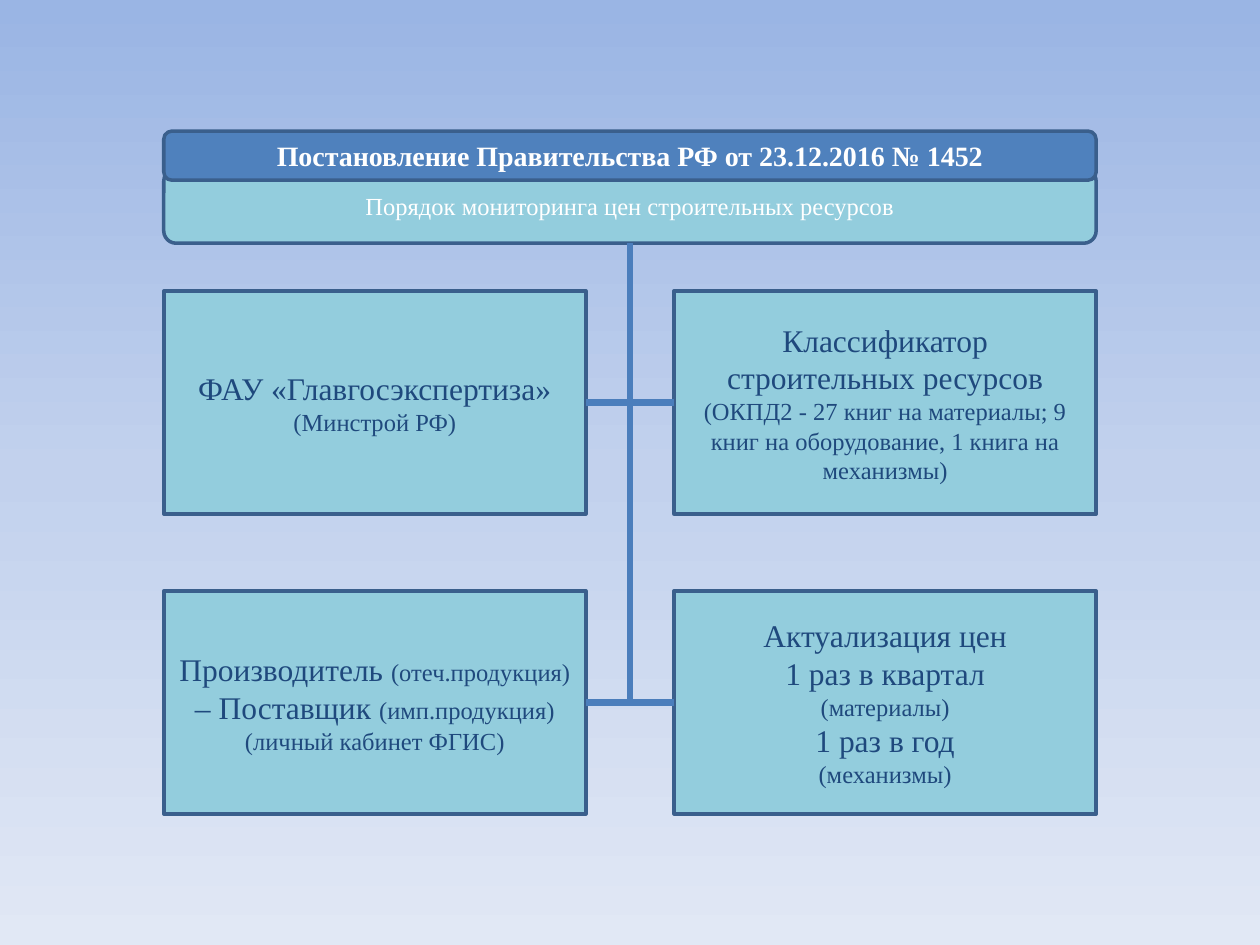
from copy import deepcopy

from lxml.etree import SubElement
from pptx import Presentation
from pptx.dml.color import RGBColor
from pptx.enum.shapes import MSO_CONNECTOR as Connector, MSO_SHAPE as Shape
from pptx.enum.text import MSO_ANCHOR as Anchor, PP_ALIGN as Align
from pptx.oxml.ns import qn
from pptx.util import Inches, Pt

SKY = [(0, RGBColor(0x9A, 0xB5, 0xE4)),
       (0.5, RGBColor(0xC2, 0xD1, 0xED)),
       (1, RGBColor(0xE1, 0xE8, 0xF5))]
AQUA = RGBColor(0x93, 0xCD, 0xDD)
BLUE = RGBColor(0x4F, 0x81, 0xBD)
BORDER = RGBColor(0x3A, 0x5F, 0x8C)
LINK = RGBColor(0x4B, 0x7E, 0xBC)
NAVY = RGBColor(0x1F, 0x49, 0x7D)
WHITE = RGBColor(0xFF, 0xFF, 0xFF)

FONT = "Times New Roman"
LARGE, MEDIUM, SMALL = 18, 16, 14

HEADER = (1.3, 1.04, 7.4, 0.89)
GRID = (1.3, 2.31, 7.4, 4.15)
CARD_WIDTH, CARD_HEIGHT = 3.35, 1.77

# Rows of cards; each card is a list of paragraphs, each paragraph a list of (text, size)
CARDS = [
    [
        [[("ФАУ «Главгосэкспертиза»", LARGE)],
         [("(Минстрой РФ)", SMALL)]],
        [[("Классификатор строительных ресурсов", LARGE)],
         [("(ОКПД2 - 27 книг на материалы; 9 книг на оборудование, "
           "1 книга на механизмы)", SMALL)]],
    ],
    [
        [[("Производитель ", LARGE), ("(отеч.продукция) ", SMALL),
          ("– Поставщик ", LARGE),
          ("(имп.продукция) (личный кабинет ФГИС)", SMALL)]],
        [[("Актуализация цен", LARGE)],
         [("1 раз в квартал", LARGE)],
         [("(материалы)", SMALL)],
         [("1 раз в год", LARGE)],
         [("(механизмы)", SMALL)]],
    ],
]


def paint_background(page):
    fill = page.background.fill
    fill.gradient()
    fill.gradient_angle = 270
    stop_list = page.element.find(".//" + qn("a:gsLst"))
    stop_list.append(deepcopy(stop_list[-1]))
    for stop, (position, color) in zip(fill.gradient_stops, SKY):
        stop.position = position
        stop.color.rgb = color


def add_box(page, kind, area, fill, paragraphs, color, bold=False):
    box = page.shapes.add_shape(kind, *map(Inches, area))
    box.shadow.inherit = False
    box.fill.solid()
    box.fill.fore_color.rgb = fill
    box.line.color.rgb = BORDER
    box.line.width = Pt(2)
    frame = box.text_frame
    frame.word_wrap = True
    frame.vertical_anchor = Anchor.MIDDLE
    for index, spans in enumerate(paragraphs):
        para = frame.add_paragraph() if index else frame.paragraphs[0]
        para.alignment = Align.CENTER
        for text, size in spans:
            span = para.add_run()
            span.text = text
            span.font.name = FONT
            span.font.size = Pt(size)
            span.font.bold = bold
            span.font.color.rgb = color
    return box


def add_link(page, start, end):
    link = page.shapes.add_connector(Connector.STRAIGHT, *start, *end)
    link.line.color.rgb = LINK
    link.line.width = Pt(4)
    SubElement(link.element.spPr, qn("a:effectLst"))
    return link


def add_header(page, area):
    """Place the title bar over the subtitle bar and return the latter."""
    left, top, width, height = area
    subtitle = add_box(page, Shape.ROUNDED_RECTANGLE,
                       (left, top + 0.3, width, height - 0.3), AQUA,
                       [[("Порядок мониторинга цен строительных ресурсов", SMALL)]],
                       WHITE)
    add_box(page, Shape.ROUNDED_RECTANGLE, (left, top, width, 0.39), BLUE,
            [[("Постановление Правительства РФ от 23.12.2016 № 1452", MEDIUM)]],
            WHITE, bold=True)
    return subtitle


def add_cards(page, area):
    """Place two columns of cards flush with the area's edges; return the rows."""
    left, top, width, height = area
    column_step = width - CARD_WIDTH
    row_step = height - CARD_HEIGHT
    return [
        [add_box(page, Shape.RECTANGLE,
                 (left + column * column_step, top + row * row_step,
                  CARD_WIDTH, CARD_HEIGHT), AQUA, paragraphs, NAVY)
         for column, paragraphs in enumerate(cards)]
        for row, cards in enumerate(CARDS)
    ]


def add_links(page, header, rows):
    """Draw the trunk below the header and a branch between each pair of cards."""
    middle = header.left + header.width // 2
    last = rows[-1][0]
    trunk = add_link(page, (middle, header.top + header.height),
                     (middle, last.top + last.height // 2))
    trunk.begin_connect(header, 2)
    for left_card, right_card in rows:
        level = left_card.top + left_card.height // 2
        branch = add_link(page, (right_card.left, level),
                          (left_card.left + left_card.width, level))
        branch.begin_connect(right_card, 1)
        branch.end_connect(left_card, 3)


def main():
    deck = Presentation()
    deck.slide_width, deck.slide_height = Inches(10), Inches(7.5)
    page = deck.slides.add_slide(deck.slide_layouts[6])
    paint_background(page)
    header = add_header(page, HEADER)
    rows = add_cards(page, GRID)
    add_links(page, header, rows)
    deck.save("out.pptx")


if __name__ == "__main__":
    main()
